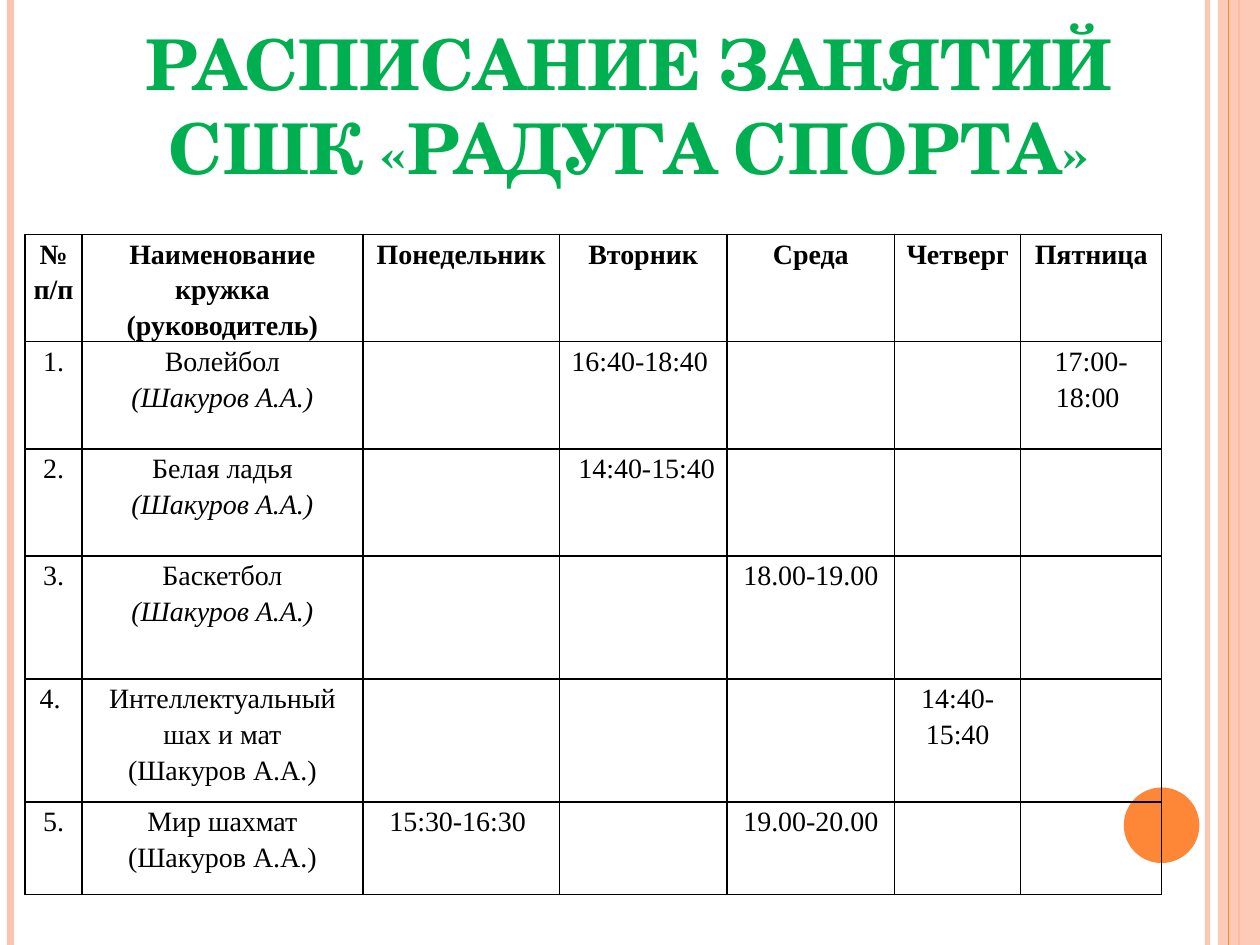
from lxml.etree import SubElement
from pptx import Presentation
from pptx.dml.color import RGBColor
from pptx.enum.shapes import MSO_CONNECTOR, MSO_SHAPE
from pptx.enum.text import MSO_ANCHOR, MSO_AUTO_SIZE, PP_ALIGN
from pptx.oxml.ns import qn
from pptx.util import Pt

PEACH = RGBColor(0xFE, 0xC3, 0xAE)
ORANGE = RGBColor(0xFE, 0x86, 0x37)
GREEN = RGBColor(0x00, 0xB0, 0x50)
BLACK = RGBColor(0x00, 0x00, 0x00)

WIDTH, HEIGHT = 720, 540
COLUMNS = [32.4, 160.6, 112.3, 95.8, 95.8, 72, 80.6]
ROWS = [61.2, 61.2, 61.2, 70.4, 70.4, 52.8]
HEADERS = ["№ п/п", "Наименование кружка\n(руководитель)", "Понедельник",
           "Вторник", "Среда", "Четверг", "Пятница"]
LEADER = "(Шакуров А.А.)"
CLUBS = [
    ("1.", "Волейбол", True, {3: "16:40-18:40 ", 6: "17:00-18:00 "}),
    ("2.", "Белая ладья", True, {3: " 14:40-15:40"}),
    ("3.", "Баскетбол", True, {4: "18.00-19.00"}),
    ("4. ", "Интеллектуальный шах и мат", False, {5: "14:40-15:40"}),
    ("5.", "Мир шахмат", False, {2: "15:30-16:30 ", 4: "19.00-20.00"}),
]


def add_text(p, text, size=16, font="Times New Roman", color=BLACK,
             bold=False, italic=False, small_caps=False, spacing=None):
    """Write centred, formatted text into a paragraph."""
    p.alignment = PP_ALIGN.CENTER
    p.line_spacing = spacing
    for i, line in enumerate(text.split("\n")):
        if i:
            p.add_line_break()
        r = p.add_run()
        r.text = line
        f = r.font
        f.size, f.name, f.bold, f.italic = Pt(size), font, bold, italic
        f.color.rgb = color
        if small_caps:
            f._element.set("cap", "small")


def set_opacity(sp, percent):
    """Make the solid colour of a shape or line partly transparent."""
    color = next(sp._element.spPr.iter(qn("a:srgbClr")))
    SubElement(color, qn("a:alpha"), val=str(percent * 1000))


def add_rule(s, x, top, height, color, weight):
    """Draw a vertical line without a shadow."""
    line = s.shapes.add_connector(MSO_CONNECTOR.STRAIGHT, Pt(x), Pt(top), Pt(x), Pt(top + height))
    line.line.color.rgb = color
    line.line.width = Pt(weight)
    SubElement(line._element.spPr, qn("a:effectLst"))
    return line


def add_solid(s, kind, left, top, width, height, color):
    """Draw a filled shape without outline or shadow."""
    sp = s.shapes.add_shape(kind, Pt(left), Pt(top), Pt(width), Pt(height))
    sp.shadow.inherit = False
    sp.fill.solid()
    sp.fill.fore_color.rgb = color
    sp.line.fill.background()
    return sp


def add_decoration(s, left, top, width, height):
    """Draw the edge stripes and the circle within the given box."""
    right = left + width
    set_opacity(add_rule(s, right - 30, top, height, PEACH, 3), 93)
    add_rule(s, left + 6, top, height, PEACH, 4.5)
    add_rule(s, right - 12, top, height, ORANGE, 1.5)
    set_opacity(add_solid(s, MSO_SHAPE.RECTANGLE, right - 24, top, 24, height, PEACH), 87)
    add_rule(s, right - 18, top, height, ORANGE, 0.75)
    add_solid(s, MSO_SHAPE.OVAL, right - 77.8, top + height - 90, 43.2, 43.2, ORANGE)


def add_title(s, left, top, width, height):
    """Place and format the title placeholder."""
    title = s.shapes.title
    title.left, title.top, title.width, title.height = map(Pt, (left, top, width, height))
    tf = title.text_frame
    tf.auto_size = MSO_AUTO_SIZE.NONE
    tf.vertical_anchor = MSO_ANCHOR.BOTTOM
    add_text(tf.paragraphs[0], "РАСПИСАНИЕ ЗАНЯТИЙ\nСШК «РАДУГА СПОРТА»", size=40,
             font="TeX Gyre Schola", color=GREEN, bold=True, small_caps=True)


def format_cell(cell):
    """Give a cell its margins, thin black borders and no fill."""
    cell.margin_left = cell.margin_right = Pt(3.6)
    cell.margin_top = cell.margin_bottom = 0
    tc_pr = cell._tc.get_or_add_tcPr()
    for side in ("lnL", "lnR", "lnT", "lnB"):
        border = SubElement(tc_pr, qn(f"a:{side}"), w=str(Pt(1)))
        fill = SubElement(border, qn("a:solidFill"))
        SubElement(fill, qn("a:srgbClr"), val=str(BLACK))
    cell.fill.background()


def fill_cell(cell, text, bold=False, italic_leader=False):
    """Write each line of the text as a paragraph of the cell."""
    tf = cell.text_frame
    for i, line in enumerate(text.split("\n")):
        p = tf.add_paragraph() if i else tf.paragraphs[0]
        add_text(p, line, bold=bold, italic=italic_leader and line == LEADER, spacing=1.15)


def add_schedule(s, left, top):
    """Build the weekly timetable from its top-left corner."""
    frame = s.shapes.add_table(len(ROWS), len(COLUMNS), Pt(left), Pt(top),
                               Pt(sum(COLUMNS)), Pt(sum(ROWS)))
    table = frame.table
    for column, width in zip(table.columns, COLUMNS):
        column.width = Pt(width)
    for row, height in zip(table.rows, ROWS):
        row.height = Pt(height)
    for cell in table.iter_cells():
        format_cell(cell)
    for c, header in enumerate(HEADERS):
        fill_cell(table.cell(0, c), header, bold=True)
    for n, (number, club, italic, times) in enumerate(CLUBS, 1):
        texts = {0: number, 1: f"{club}\n{LEADER}", **times}
        for c, text in texts.items():
            fill_cell(table.cell(n, c), text, italic_leader=italic)


def main():
    """Build and save the timetable slide."""
    prs = Presentation()
    prs.slide_width, prs.slide_height = Pt(WIDTH), Pt(HEIGHT)
    s = prs.slides.add_slide(prs.slide_layouts[5])
    add_decoration(s, 0, 0, WIDTH, HEIGHT)
    add_title(s, 36, 21.6, 647.3, 90)
    add_schedule(s, 14.4, 133.9)
    prs.save("out.pptx")


if __name__ == "__main__":
    main()
